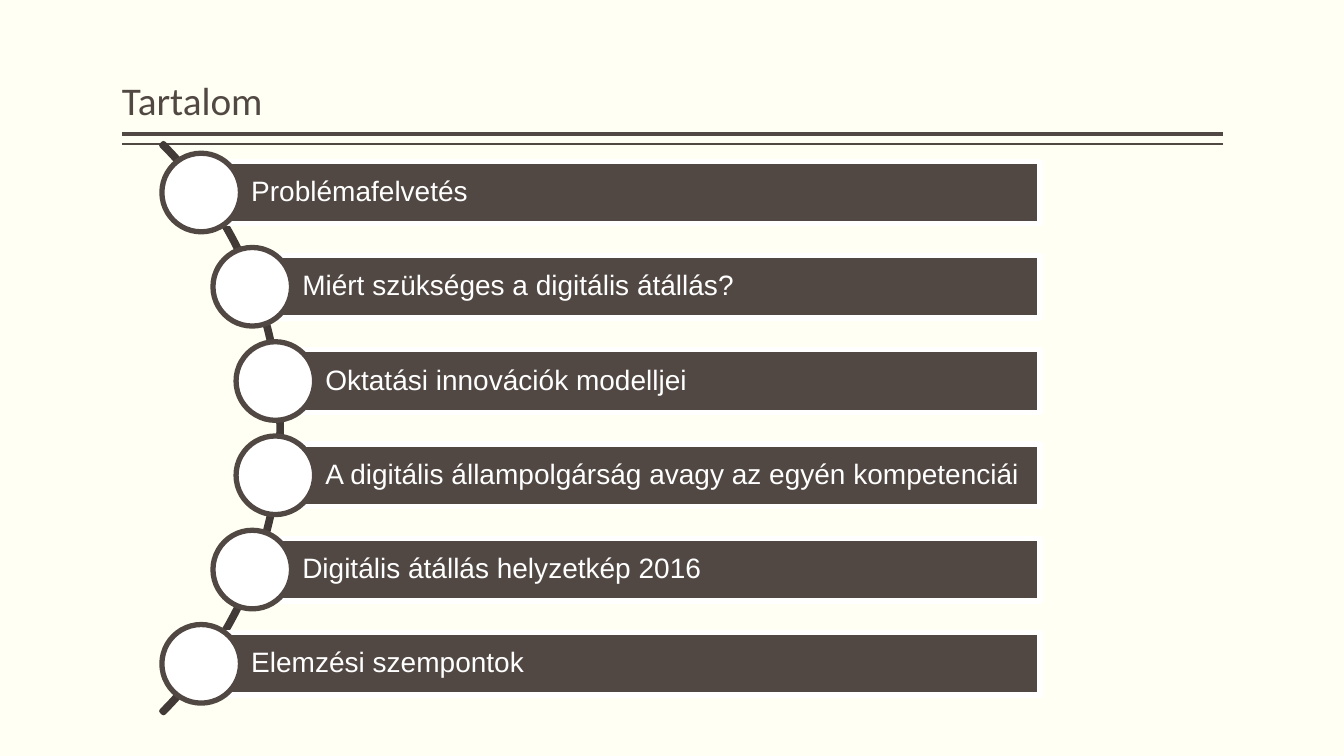
from collections import namedtuple
from math import sqrt

from lxml.etree import SubElement
from pptx import Presentation
from pptx.dml.color import RGBColor
from pptx.enum.shapes import MSO_CONNECTOR, MSO_SHAPE
from pptx.enum.text import MSO_ANCHOR as Anchor, MSO_AUTO_SIZE as AutoSize, PP_ALIGN as Align
from pptx.oxml.ns import qn
from pptx.util import Cm, Pt

Box = namedtuple("Box", "left top width height")

BROWN, DARK_BROWN, WHITE, IVORY = "514843", "413A36", "FFFFFF", "FFFFF3"
TOPICS = [
    "Problémafelvetés",
    "Miért szükséges a digitális átállás?",
    "Oktatási innovációk modelljei",
    "A digitális állampolgárság avagy az egyén kompetenciái",
    "Digitális átállás helyzetkép 2016",
    "Elemzési szempontok",
]
ROW_PITCH = 2.375
BAR_HEIGHT = 1.58
CIRCLE_SIZE = 1.98
OUTLINE = 3.78


def color(value):
    return RGBColor.from_string(value)


def add_outlined(slide, kind, box, fill, line):
    shape = slide.shapes.add_shape(kind, *(Cm(length) for length in box))
    shape.shadow.inherit = False
    if fill:
        shape.fill.solid()
        shape.fill.fore_color.rgb = color(fill)
    else:
        shape.fill.background()
    shape.line.color.rgb = color(line)
    shape.line.width = Pt(OUTLINE)
    return shape


def format_text(text_frame, text, font_name, size, text_color, anchor, insets):
    text_frame.text = text
    text_frame.word_wrap = True
    text_frame.auto_size = AutoSize.NONE
    text_frame.vertical_anchor = anchor
    text_frame.margin_left, text_frame.margin_right, vertical = (Cm(inset) for inset in insets)
    text_frame.margin_top = text_frame.margin_bottom = vertical
    paragraph = text_frame.paragraphs[0]
    paragraph.alignment = Align.LEFT
    paragraph.line_spacing = 0.9
    font = paragraph.runs[0].font
    font.name, font.size = font_name, Pt(size)
    font.color.rgb = color(text_color)
    return paragraph


def add_rule(slide, left, top, width, weight):
    rule = slide.shapes.add_connector(
        MSO_CONNECTOR.STRAIGHT, Cm(left), Cm(top), Cm(left + width), Cm(top))
    rule.line.color.rgb = color(BROWN)
    rule.line.width = Pt(weight)
    SubElement(rule._element.spPr, qn("a:effectLst"))


def add_heading(slide, box, text):
    title = slide.shapes.title
    title.left, title.top, title.width, title.height = (Cm(length) for length in box)
    format_text(title.text_frame, text, "Calibri", 28, BROWN, Anchor.BOTTOM, (0, 0, 0.13))
    bottom = box.top + box.height
    for offset, weight in [(0.13, 3), (0.38, 1)]:
        add_rule(slide, box.left, bottom + offset, box.width, weight)


def add_topic(slide, center_x, center_y, right, text):
    bar_box = Box(center_x, center_y - BAR_HEIGHT / 2, right - center_x, BAR_HEIGHT)
    bar = add_outlined(slide, MSO_SHAPE.RECTANGLE, bar_box, BROWN, WHITE)
    paragraph = format_text(
        bar.text_frame, text, "Arial", 20, WHITE, Anchor.MIDDLE, (1.26, 0.14, 0.14))
    paragraph.space_after = Pt(7)
    circle_box = Box(center_x - CIRCLE_SIZE / 2, center_y - CIRCLE_SIZE / 2,
                     CIRCLE_SIZE, CIRCLE_SIZE)
    add_outlined(slide, MSO_SHAPE.OVAL, circle_box, WHITE, BROWN)


def add_curved_list(slide, box, topics):
    radius = box.height / sqrt(2)
    center_x = box.left - box.height / 2
    center_y = box.top + box.height / 2
    arc_box = Box(center_x - radius, center_y - radius, 2 * radius, 2 * radius)
    arc = add_outlined(slide, MSO_SHAPE.BLOCK_ARC, arc_box, None, DARK_BROWN)
    for index, value in enumerate([189, 27, 0.003]):
        arc.adjustments[index] = value

    circle_track = radius - 0.08
    for index, topic in enumerate(topics):
        offset = (index - (len(topics) - 1) / 2) * ROW_PITCH
        topic_x = center_x + sqrt(circle_track ** 2 - offset ** 2)
        add_topic(slide, topic_x, center_y + offset, box.left + box.width, topic)


def main():
    presentation = Presentation()
    presentation.slide_width, presentation.slide_height = Cm(33.87), Cm(19.05)
    slide = presentation.slides.add_slide(presentation.slide_layouts.get_by_name("Title Only"))
    slide.background.fill.solid()
    slide.background.fill.fore_color.rgb = color(IVORY)
    add_heading(slide, Box(3.07, 0.2, 27.74, 3.05), "Tartalom")
    add_curved_list(slide, Box(4.12, 3.62, 22.09, 14.34), TOPICS)
    presentation.save("out.pptx")


if __name__ == "__main__":
    main()
